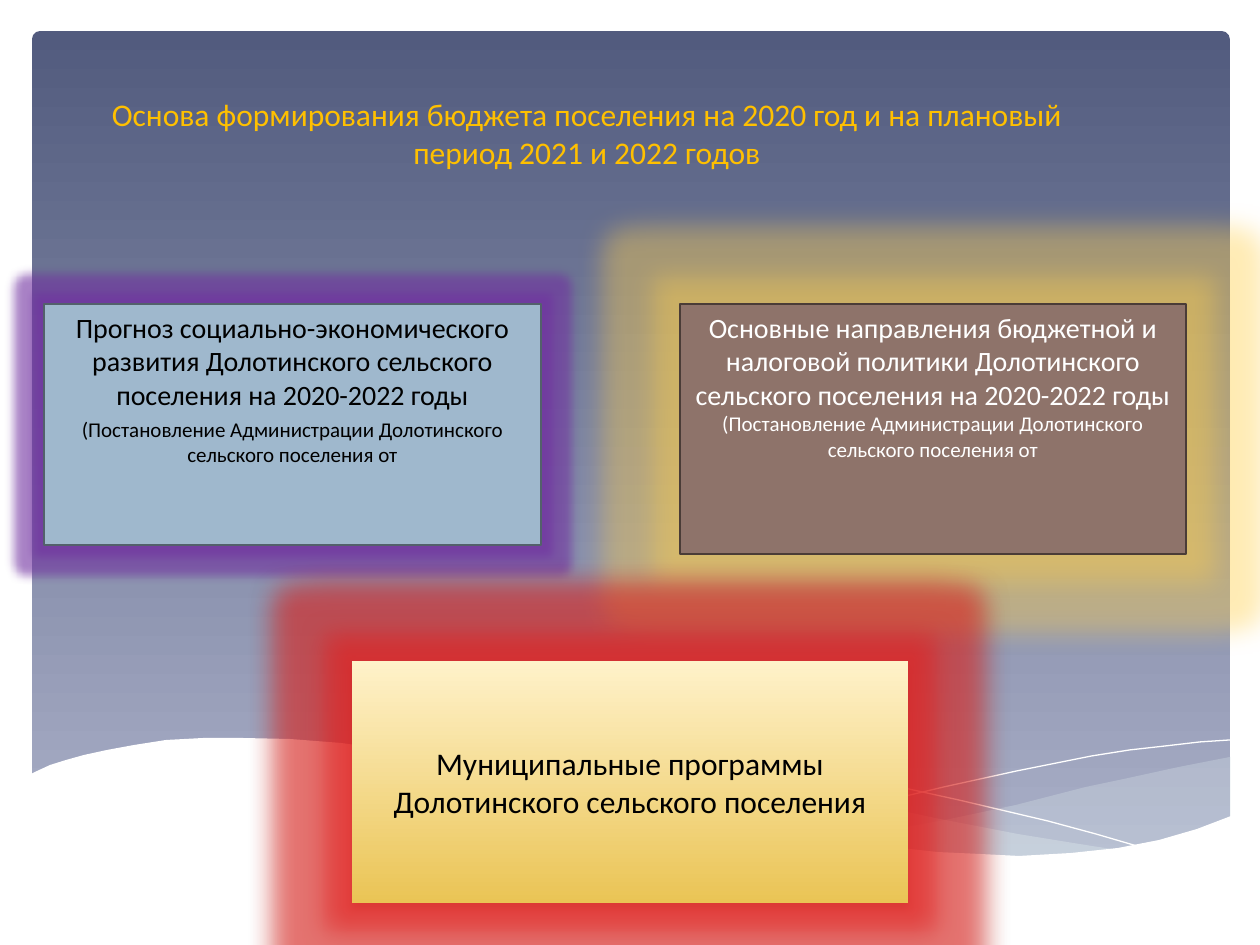
from dataclasses import dataclass
from typing import Optional
from lxml.etree import SubElement
from pptx import Presentation
from pptx.dml.color import RGBColor
from pptx.enum.shapes import MSO_SHAPE
from pptx.enum.text import MSO_ANCHOR, PP_ALIGN
from pptx.oxml.ns import qn
from pptx.util import Pt

SCALE = 914400 / 126


@dataclass(frozen=True)
class Theme:
    font: str = "Calibri"
    head: int = 18
    body: int = 16
    note: int = 12
    gold: str = "FFC000"
    black: str = "000000"
    white: str = "FFFFFF"
    mist: str = "DDE9EC"
    sky: tuple = ("525B7E", "AAB0C8")
    sand: tuple = ("FFF2CA", "EAC455")


@dataclass(frozen=True)
class Glow:
    color: str
    size: int
    alpha: int


@dataclass(frozen=True)
class Box:
    at: tuple
    fill: object
    ink: str
    lines: tuple
    glow: Glow
    edge: Optional[str] = None
    gap: int = 0
    anchor: MSO_ANCHOR = MSO_ANCHOR.TOP
    shade: bool = False


@dataclass(frozen=True)
class Wave:
    points: tuple
    fill: Optional[str] = None
    alpha: int = 100


T = Theme()

WAVES = (
    Wave(((1230, 757), (1179, 767), (1124, 779), (1086, 787), (1016, 805),
          (950, 819), (891, 830), (834, 840), (872, 845), (906, 849),
          (940, 853), (985, 856), (1027, 856), (1077, 855), (1122, 849),
          (1162, 841), (1198, 830), (1231, 818), (1231, 757)), T.mist, 29),
    Wave(((1126, 851), (1092, 846), (1018, 834), (935, 818), (843, 798),
          (794, 786), (736, 772), (699, 765), (665, 759), (633, 753),
          (586, 747), (529, 742), (479, 740), (435, 741), (396, 743),
          (362, 747), (407, 753), (457, 761), (510, 772), (567, 786),
          (619, 799), (668, 810), (714, 819), (759, 828), (800, 835),
          (839, 842), (877, 847), (911, 852), (944, 854), (975, 856),
          (1005, 857), (1045, 857), (1082, 855), (1126, 851)), T.mist, 40),
    Wave(((391, 752), (423, 747), (457, 743), (489, 742), (525, 742),
          (568, 743), (616, 746), (672, 751), (733, 758), (803, 769),
          (877, 782), (959, 800), (1048, 821), (1096, 834), (1144, 848))),
    Wave(((774, 830), (823, 816), (877, 803), (944, 787), (1017, 771),
          (1092, 756), (1130, 750), (1166, 746), (1200, 742), (1230, 740))),
    Wave(((1231, 816), (1197, 829), (1159, 840), (1118, 848), (1071, 853),
          (1019, 856), (980, 854), (937, 852), (892, 847), (842, 840),
          (789, 832), (730, 820), (667, 807), (599, 791), (563, 784),
          (527, 775), (460, 761), (398, 751), (341, 743), (290, 739),
          (243, 738), (203, 738), (166, 740), (134, 745), (107, 750),
          (84, 755), (66, 760), (50, 765), (37, 771), (29, 775),
          (29, 921), (1231, 921)), T.white),
)

BOXES = (
    Box((44, 304, 497, 241), "9FB8CD", T.black,
        (("Прогноз социально-экономического развития Долотинского сельского "
          "поселения на 2020-2022 годы", T.body),
         ("(Постановление Администрации Долотинского сельского поселения от",
          T.note)),
        Glow("7030A0", 11, 60), "53606B", 3),
    Box((680, 304, 506, 250), "8E736A", T.white,
        (("Основные направления бюджетной и налоговой политики Долотинского "
          "сельского поселения на 2020-2022 годы", T.body),
         ("(Постановление Администрации Долотинского сельского поселения от",
          T.note)),
        Glow("FFD04A", 30, 40), "4A3C37"),
    Box((352, 661, 556, 242), T.sand, T.black,
        (("Муниципальные программы Долотинского сельского поселения", T.head),),
        Glow("E81C1C", 30, 55), anchor=MSO_ANCHOR.MIDDLE, shade=True),
)


def px(n: int) -> int:
    return round(n * SCALE)


def rgb(code: str) -> RGBColor:
    return RGBColor.from_string(code)


def paint(shape, fill) -> None:
    if fill is None:
        shape.fill.background()
    elif isinstance(fill, tuple):
        shape.fill.gradient()
        shape.fill.gradient_angle = 270
        for stop, code, spot in zip(shape.fill.gradient_stops, fill, (0, 1)):
            stop.color.rgb = rgb(code)
            stop.position = spot
    else:
        shape.fill.solid()
        shape.fill.fore_color.rgb = rgb(fill)


def outline(shape, code: Optional[str], width: float) -> None:
    if code is None:
        shape.line.fill.background()
    else:
        shape.line.color.rgb = rgb(code)
        shape.line.width = Pt(width)


def tint(node, code: str, alpha: int) -> None:
    color = SubElement(node, qn("a:srgbClr"), val=code)
    SubElement(color, qn("a:alpha"), val=str(alpha * 1000))


def style(par, ink: str, size: int) -> None:
    par.alignment = PP_ALIGN.CENTER
    for run in par.runs:
        run.font.name = T.font
        run.font.size = Pt(size)
        run.font.color.rgb = rgb(ink)


def add_wave(slide, wave: Wave) -> None:
    first, *rest = wave.points
    form = slide.shapes.build_freeform(*first, scale=SCALE)
    form.add_line_segments(rest, close=wave.fill is not None)
    shape = form.convert_to_shape()
    shape.shadow.inherit = False
    paint(shape, wave.fill)
    outline(shape, None if wave.fill else T.white, 0)
    if wave.alpha < 100:
        color = shape._element.spPr.find(".//" + qn("a:srgbClr"))
        SubElement(color, qn("a:alpha"), val=str(wave.alpha * 1000))


def add_box(slide, box: Box) -> None:
    shape = slide.shapes.add_shape(MSO_SHAPE.RECTANGLE, *map(px, box.at))
    shape.shadow.inherit = False
    paint(shape, box.fill)
    outline(shape, box.edge, 1.25)
    fx = shape._element.spPr.find(qn("a:effectLst"))
    glow = SubElement(fx, qn("a:glow"), rad=str(Pt(box.glow.size)))
    tint(glow, box.glow.color, box.glow.alpha)
    if box.shade:
        shade = SubElement(fx, qn("a:outerShdw"), blurRad=str(Pt(4.5)),
                           dist=str(Pt(3)), dir="5400000")
        tint(shade, "594D2A", 48)
    frame = shape.text_frame
    frame.word_wrap = True
    frame.vertical_anchor = box.anchor
    frame.text = "\n".join(text for text, _ in box.lines)
    for par, (_, size) in zip(frame.paragraphs, box.lines):
        style(par, box.ink, size)
        par.space_before = Pt(box.gap)


def add_title(slide) -> None:
    title = slide.shapes.title
    title.left, title.top, title.width, title.height = map(px, (84, 66, 1006, 111))
    frame = title.text_frame
    frame.text = ("Основа формирования бюджета поселения на 2020 год "
                  "и на плановый период 2021 и 2022 годов")
    frame.word_wrap = True
    frame.vertical_anchor = MSO_ANCHOR.BOTTOM
    style(frame.paragraphs[0], T.gold, T.head)


def main() -> None:
    deck = Presentation()
    deck.slide_width, deck.slide_height = px(1260), px(945)
    slide = deck.slides.add_slide(deck.slide_layouts[5])
    sky = slide.shapes.add_shape(MSO_SHAPE.ROUNDED_RECTANGLE,
                                 *map(px, (32, 31, 1198, 832)))
    sky.adjustments[0] = 0.01
    sky.shadow.inherit = False
    paint(sky, T.sky)
    outline(sky, None, 0)
    for wave in WAVES:
        add_wave(slide, wave)
    add_title(slide)
    for box in BOXES:
        add_box(slide, box)
    tree = slide.shapes._spTree
    tree.remove(sky._element)
    tree.insert(2, sky._element)
    title = slide.shapes.title._element
    tree.remove(title)
    tree.insert(3 + len(WAVES), title)
    deck.save("out.pptx")


if __name__ == "__main__":
    main()
